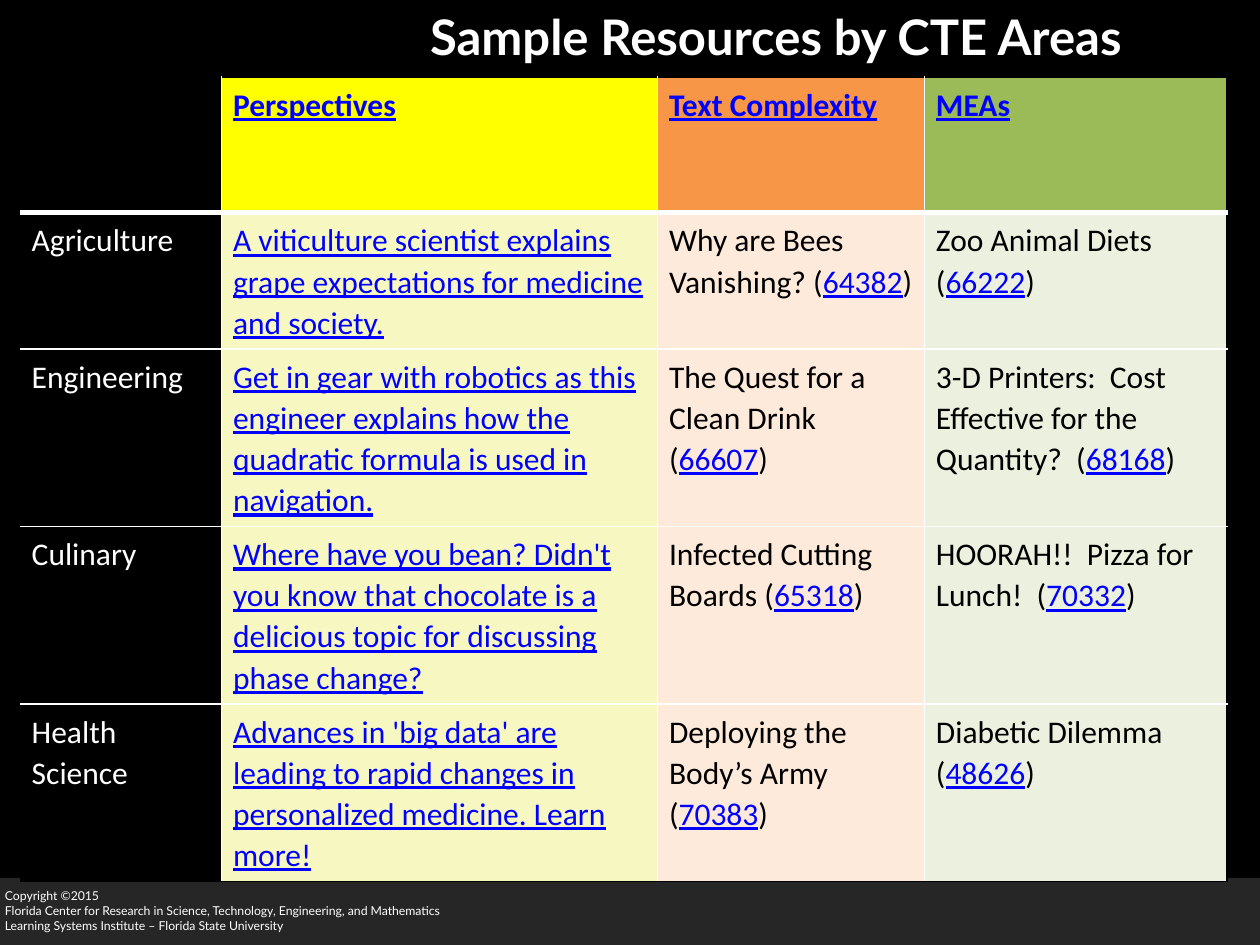
from lxml import etree
from pptx import Presentation
from pptx.dml.color import RGBColor
from pptx.enum import shapes, text
from pptx.oxml import ns
from pptx.util import Cm, Pt

BLACK = RGBColor(0x00, 0x00, 0x00)
WHITE = RGBColor(0xFF, 0xFF, 0xFF)
CHARCOAL = RGBColor(0x26, 0x26, 0x26)
LINK_BLUE = RGBColor(0x00, 0x00, 0xFF)
YELLOW = RGBColor(0xFF, 0xFF, 0x00)
ORANGE = RGBColor(0xF7, 0x96, 0x46)
GREEN = RGBColor(0x9B, 0xBB, 0x59)
PALE_YELLOW = RGBColor(0xF6, 0xF7, 0xC1)
PALE_ORANGE = RGBColor(0xFD, 0xEA, 0xDA)
PALE_GREEN = RGBColor(0xEB, 0xF1, 0xDE)

HEADER_FILLS = [BLACK, YELLOW, ORANGE, GREEN]
BODY_FILLS = [BLACK, PALE_YELLOW, PALE_ORANGE, PALE_GREEN]
COLUMN_WIDTHS = [4.06, 8.79, 5.38, 6.1]
ROW_HEIGHTS = [2.74, 2.74, 3.53, 3.53, 3.48]

HEADERS = ["", "Perspectives", "Text Complexity", "MEAs"]
RESOURCES = [
    ("Agriculture",
     "A viticulture scientist explains grape expectations for medicine and society.",
     ("Why are Bees Vanishing? (", "64382"),
     ("Zoo Animal Diets (", "66222")),
    ("Engineering",
     "Get in gear with robotics as this engineer explains how the quadratic formula "
     "is used in navigation.",
     ("The Quest for a Clean Drink (", "66607"),
     ("3-D Printers:  Cost Effective for the Quantity?  (", "68168")),
    ("Culinary",
     "Where have you bean? Didn't you know that chocolate is a delicious topic for "
     "discussing phase change?",
     ("Infected Cutting Boards (", "65318"),
     ("HOORAH!!  Pizza for Lunch!  (", "70332")),
    ("Health Science",
     "Advances in 'big data' are leading to rapid changes in personalized medicine. "
     "Learn more!",
     ("Deploying the Body’s Army (", "70383"),
     ("Diabetic Dilemma (", "48626")),
]
COPYRIGHT_LINES = [
    "Copyright ©2015",
    "Florida Center for Research in Science, Technology, Engineering, and Mathematics",
    "Learning Systems Institute – Florida State University",
]


def format_title(title):
    title.left, title.top, title.width, title.height = Cm(0), Cm(0), Cm(22.86), Cm(3.18)
    frame = title.text_frame
    frame.text = "Sample Resources by CTE Areas"
    frame.auto_size = text.MSO_AUTO_SIZE.NONE
    frame.vertical_anchor = text.MSO_ANCHOR.TOP
    paragraph = frame.paragraphs[0]
    paragraph.alignment = text.PP_ALIGN.RIGHT
    set_font(paragraph.font, "Lato", 28, WHITE, bold=True)


def set_font(font, name, size, color, bold=False):
    font.name = name
    font.size = Pt(size)
    font.color.rgb = color
    font.bold = bold


def add_footer(slide):
    footer = slide.shapes.add_shape(
        shapes.MSO_SHAPE.RECTANGLE, Cm(-0.03), Cm(17.7), Cm(25.43), Cm(1.35))
    footer.shadow.inherit = False
    footer.fill.solid()
    footer.fill.fore_color.rgb = CHARCOAL
    footer.line.fill.background()
    frame = footer.text_frame
    frame.word_wrap = True
    frame.vertical_anchor = text.MSO_ANCHOR.BOTTOM
    frame.margin_left = frame.margin_top = Cm(0.13)
    frame.margin_right = frame.margin_bottom = Cm(0.25)
    for index, line in enumerate(COPYRIGHT_LINES):
        paragraph = frame.add_paragraph() if index else frame.paragraphs[0]
        paragraph.text = line
        paragraph.alignment = text.PP_ALIGN.LEFT
        set_font(paragraph.font, "Lato", 7, WHITE)


def add_border(cell, side, color, width):
    line = etree.SubElement(
        cell._tc.get_or_add_tcPr(), ns.qn(f"a:ln{side}"), w=str(Pt(width)))
    fill = etree.SubElement(line, ns.qn("a:solidFill"))
    etree.SubElement(fill, ns.qn("a:srgbClr"), val=str(color))


def style_cell(cell, row, column):
    last_row, last_column = len(ROW_HEIGHTS) - 1, len(COLUMN_WIDTHS) - 1
    add_border(cell, "L", WHITE if column else BLACK, 1)
    add_border(cell, "R", WHITE if column < last_column else BLACK, 1)
    add_border(cell, "T", WHITE if row else BLACK, 3 if row == 1 else 1)
    add_border(cell, "B", WHITE if row < last_row else BLACK, 1 if row else 3)
    cell.fill.solid()
    cell.fill.fore_color.rgb = (BODY_FILLS if row else HEADER_FILLS)[column]
    cell.margin_left = cell.margin_right = Cm(0.23)
    cell.margin_top = cell.margin_bottom = Cm(0.13)


def add_run(paragraph, content, color):
    run = paragraph.add_run()
    run.text = content
    run.font.color.rgb = color
    run.font.underline = color == LINK_BLUE


def write_cell(cell, content, row, column):
    paragraph = cell.text_frame.paragraphs[0]
    paragraph.line_spacing = 1.07
    paragraph.space_after = Pt(8)
    set_font(paragraph.font, "Calibri", 18, BLACK, bold=row == 0)
    if isinstance(content, tuple):
        label, number = content
        add_run(paragraph, label, BLACK)
        add_run(paragraph, number, LINK_BLUE)
        add_run(paragraph, ")", BLACK)
    elif content:
        add_run(paragraph, content, LINK_BLUE if column else WHITE)


def add_resource_table(slide):
    table = slide.shapes.add_table(
        len(ROW_HEIGHTS), len(COLUMN_WIDTHS), Cm(0.41), Cm(1.55),
        Cm(sum(COLUMN_WIDTHS)), Cm(sum(ROW_HEIGHTS))).table
    for column, width in zip(table.columns, COLUMN_WIDTHS):
        column.width = Cm(width)
    for row, height in zip(table.rows, ROW_HEIGHTS):
        row.height = Cm(height)
    for row, contents in enumerate([HEADERS, *RESOURCES]):
        for column, content in enumerate(contents):
            cell = table.cell(row, column)
            style_cell(cell, row, column)
            write_cell(cell, content, row, column)


def main():
    presentation = Presentation()
    presentation.slide_width, presentation.slide_height = Cm(25.4), Cm(19.05)
    slide = presentation.slides.add_slide(presentation.slide_layouts[5])
    slide.background.fill.solid()
    slide.background.fill.fore_color.rgb = BLACK
    format_title(slide.shapes.title)
    add_footer(slide)
    add_resource_table(slide)
    presentation.save("out.pptx")


if __name__ == "__main__":
    main()
